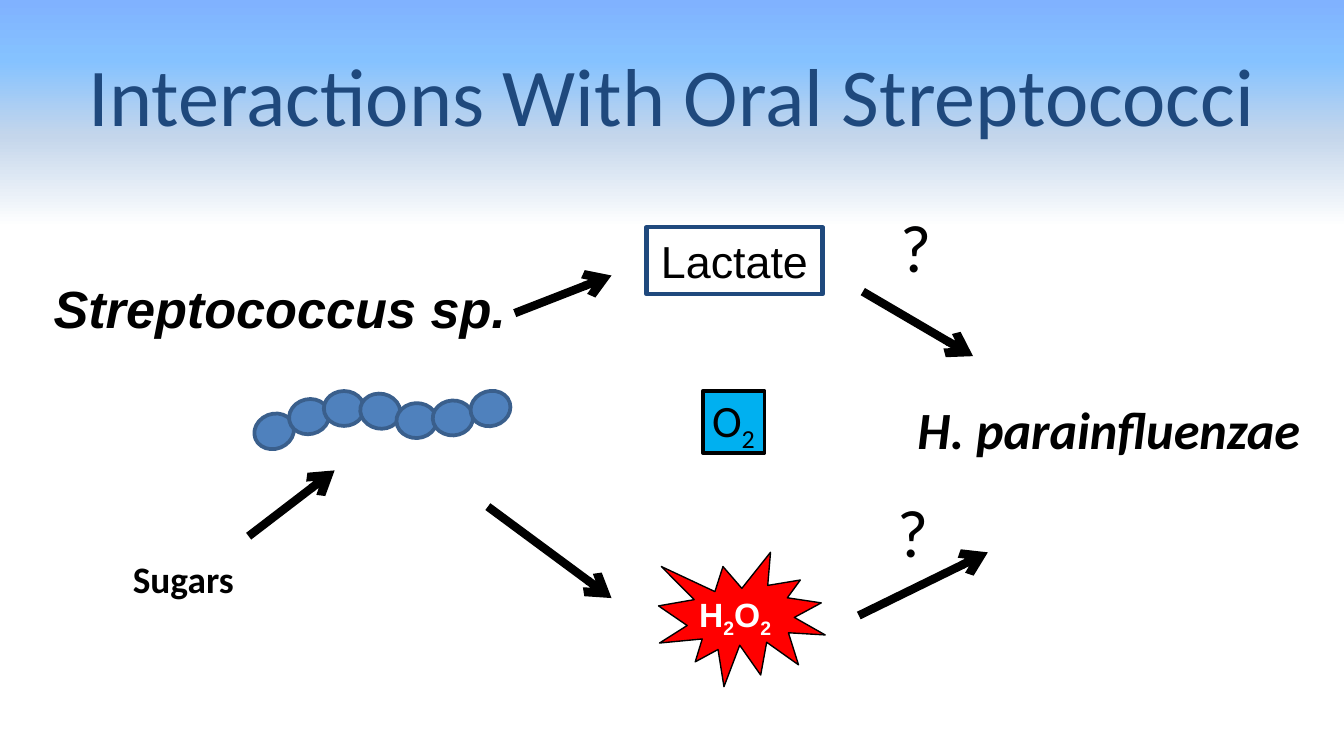
from itertools import groupby
from pptx import Presentation
from pptx.dml.color import RGBColor as RGB
from pptx.enum.shapes import MSO_CONNECTOR as LINK, MSO_SHAPE as KIND
from pptx.enum.text import MSO_ANCHOR as ANCHOR, PP_ALIGN as ALIGN
from pptx.oxml.ns import qn
from pptx.oxml.xmlchemy import OxmlElement as Element
from pptx.util import Inches, Pt

HUES = {"black": "000000", "white": "FFFFFF", "navy": "1F497D", "cell": "4F81BD",
        "rim": "3A5F8C", "red": "FF0000", "cyan": "00B0F0"}
FADE = [(0, "80B2FF"), (8, "85C2FF"), (18, "C4D6EB"), (30, "FFFFFF")]
TITLE = "Interactions With Oral Streptococci"
CELL = (0.3, 0.26)
CELLS = [(1.89, 3.08, -21.7), (2.15, 2.97, -13.2), (2.41, 2.91, 0), (2.68, 2.93, 12),
         (2.95, 3, -3), (3.22, 2.98, -3), (3.5, 2.91, -17.1)]
BURST = (4.9, 4.11, 1.24, 1)
PEROXIDE = ("H2O2", (5.09, 4.37, 0.76, 0.4), 18, "Arial", "b", "white", ALIGN.CENTER)
LACTATE = ("Lactate", 24, "Arial", "", "black", ALIGN.CENTER)
FRAME = (4.81, 1.69, 1.31, 0.5)
OXYGEN = (5.23, 2.91, 0.46, 0.46)
LABELS = [
    ("Streptococcus sp.", (0.3, 2.01, 3.61, 0.57), 28, "Arial", "bi", "black", ALIGN.LEFT),
    ("?", (6.6, 1.48, 0.63, 0.71), 36, "Calibri", "", "black", ALIGN.LEFT),
    ("?", (6.58, 3.6, 0.88, 0.71), 36, "Calibri", "", "black", ALIGN.LEFT),
    ("O2", (5.2, 2.87, 0.54, 0.5), 24, "Calibri", "", "black", ALIGN.LEFT),
    ("H. parainfluenzae", (6.71, 2.91, 3.08, 0.57), 28, "Calibri", "bi", "black", ALIGN.CENTER),
    ("Sugars", (0.89, 4.09, 0.96, 0.44), 20, "Calibri", "b", "black", ALIGN.LEFT),
]
ARROWS = [(3.83, 2.33, 4.55, 2.05), (6.42, 2.17, 7.24, 2.65), (3.63, 3.77, 4.55, 4.45),
          (6.39, 4.58, 7.35, 4.11), (1.85, 3.99, 2.49, 3.5)]


def color(name):
    return RGB.from_string(HUES[name])


def write(frame, text, size, face, style, hue, align):
    frame.word_wrap = False
    para = frame.paragraphs[0]
    para.alignment = align
    font = para.font
    font.size, font.name = Pt(size), face
    font.bold, font.italic = "b" in style, "i" in style
    font.color.rgb = color(hue)
    for low, part in groupby(text, str.isdigit):
        run = para.add_run()
        run.text = "".join(part)
        if low:
            run._r.get_or_add_rPr().set("baseline", "-25000")


def label(shapes, text, box, *look):
    write(shapes.add_textbox(*map(Inches, box)).text_frame, text, *look)


def draw(shapes, kind, box, fill, edge, width):
    shape = shapes.add_shape(kind, *map(Inches, box))
    shape.shadow.inherit = False
    if fill:
        shape.fill.solid()
        shape.fill.fore_color.rgb = color(fill)
    else:
        shape.fill.background()
    shape.line.color.rgb = color(edge)
    shape.line.width = Pt(width)
    return shape


def arrow(shapes, ends):
    link = shapes.add_connector(LINK.STRAIGHT, *map(Inches, ends))
    link.line.color.rgb = color("black")
    link.line.width = Pt(4.5)
    tip = Element("a:tailEnd")
    tip.set("type", "arrow")
    link.line._get_or_add_ln().append(tip)
    link._element.spPr.append(Element("a:effectLst"))


def backdrop(slide):
    fill = slide.background.fill
    fill.gradient()
    slide.element.find(".//" + qn("a:lin")).set("ang", "5400000")
    stops = slide.element.find(".//" + qn("a:gsLst"))
    for old in list(stops):
        stops.remove(old)
    for spot, hue in FADE:
        stop, tint = Element("a:gs"), Element("a:srgbClr")
        stop.set("pos", str(spot * 1000))
        tint.set("val", hue)
        stop.append(tint)
        stops.append(stop)


def main():
    deck = Presentation()
    deck.slide_width = Inches(10)
    deck.slide_height = deck.slide_width * 9 // 16
    slide = deck.slides.add_slide(deck.slide_layouts[5])
    shapes = slide.shapes
    backdrop(slide)

    title = shapes.title
    title.left, title.top, title.width, title.height = map(Inches, (0.5, 0.23, 9, 0.94))
    title.text_frame.vertical_anchor = ANCHOR.MIDDLE
    write(title.text_frame, TITLE, 44, "Calibri", "", "navy", ALIGN.CENTER)
    title.text_frame.word_wrap = True

    chain = shapes.add_group_shape().shapes
    for left, top, turn in CELLS:
        cell = draw(chain, KIND.OVAL, (left, top, *CELL), "cell", "rim", 2)
        cell.rotation = turn

    burst = shapes.add_group_shape().shapes
    draw(burst, KIND.EXPLOSION1, BURST, "red", "black", 0.75)
    label(burst, *PEROXIDE)

    frame = draw(shapes, KIND.RECTANGLE, FRAME, None, "navy", 2.25)
    write(frame.text_frame, *LACTATE)
    draw(shapes, KIND.RECTANGLE, OXYGEN, "cyan", "black", 2)
    for ends in ARROWS:
        arrow(shapes, ends)
    for item in LABELS:
        label(shapes, *item)
    deck.save("out.pptx")


if __name__ == "__main__":
    main()
